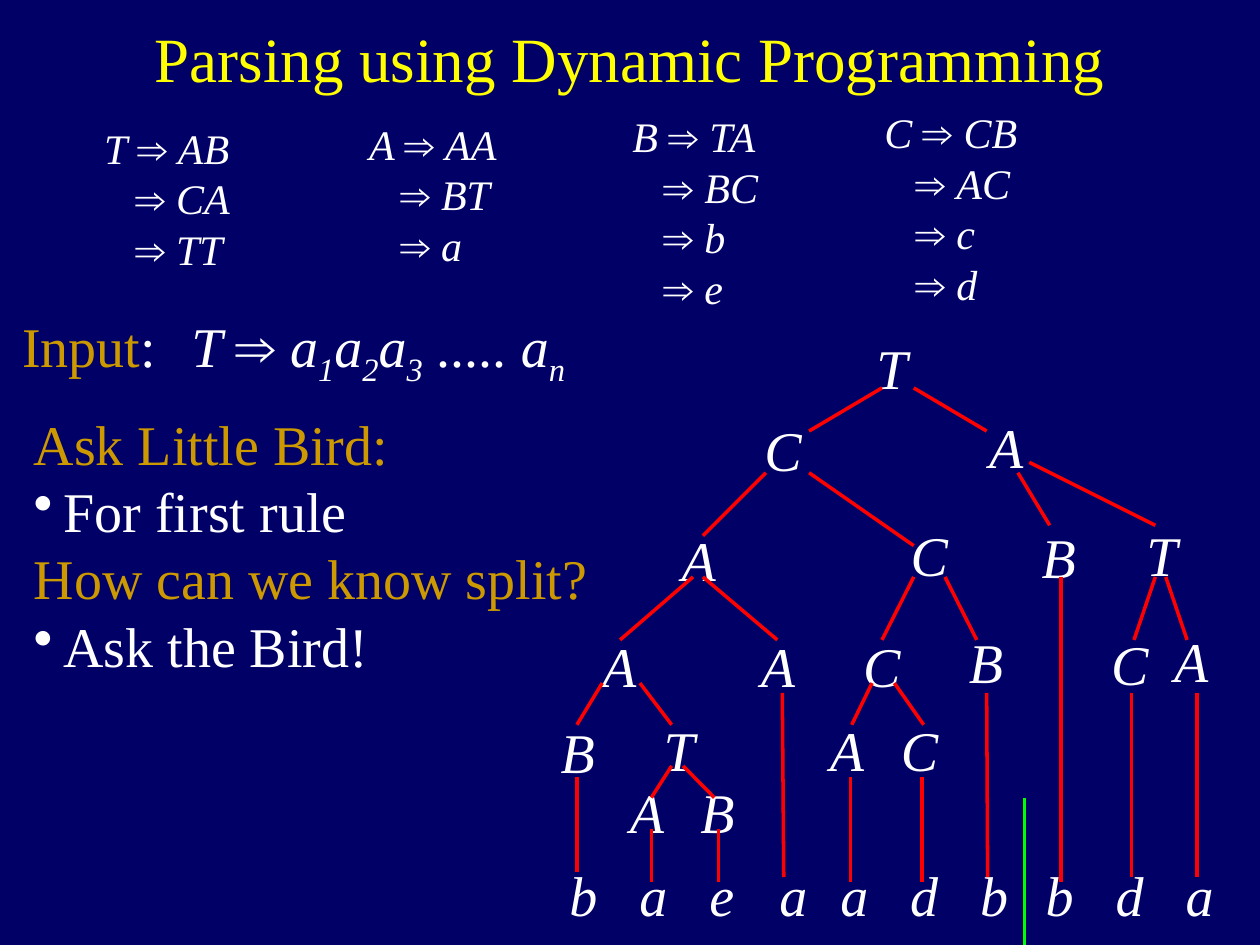
from typing import NamedTuple

from lxml import etree
from pptx import Presentation
from pptx.dml.color import RGBColor
from pptx.enum.shapes import MSO_CONNECTOR
from pptx.enum.text import MSO_ANCHOR, PP_ALIGN
from pptx.oxml.ns import qn
from pptx.util import Cm, Pt

STRAIGHT = MSO_CONNECTOR.STRAIGHT
MIDDLE = MSO_ANCHOR.MIDDLE
CENTER = PP_ALIGN.CENTER

FONT = "Times New Roman"
NAVY, YELLOW, GOLD, WHITE = "000066", "FFFF00", "CC9900", "FFFFFF"
RED, GREEN = "FF0000", "00FF00"
GRAMMAR_SIZE, TEXT_SIZE = 24, 32
RULE_INDENT, BULLET_INDENT, LEAF_GAP = 0.63, 0.6, 1.41


class Grammar(NamedTuple):
    symbol: str
    left: float
    top: float
    products: list[str]


class Label(NamedTuple):
    text: str
    left: float
    top: float
    width: float = 1.27


class Tier(NamedTuple):
    """Branches that start at one height and end at another."""
    top: float
    bottom: float
    branches: list[tuple[float, float]]


GRAMMARS = [
    Grammar("T", 1.85, 2.34, ["AB", "CA", "TT"]),
    Grammar("A", 7.19, 2.26, ["AA", "BT", "a"]),
    Grammar("B", 12.5, 2.11, ["TA", "BC", "b", "e"]),
    Grammar("C", 17.58, 2.03, ["CB", "AC", "c", "d"]),
]
ADVICE = [
    ("Ask Little Bird:", False),
    ("For first rule", True),
    ("How can we know split?", False),
    ("Ask the Bird!", True),
]
NODES = [
    Label("T", 17.42, 6.6),
    Label("C", 15.16, 8.26), Label("A", 19.69, 8.2),
    Label("A", 13.49, 10.46), Label("C", 18.11, 10.36),
    Label("B", 20.75, 10.41), Label("T", 22.86, 10.36),
    Label("A", 11.89, 12.6), Label("A", 15.09, 12.6),
    Label("C", 17.15, 12.6), Label("B", 19.28, 12.52),
    Label("C", 22.15, 12.57), Label("A", 23.42, 12.5),
    Label("B", 11.05, 14.33), Label("T", 13.13, 14.3),
    Label("A", 16.48, 14.3), Label("C", 17.91, 14.3),
    Label("A", 12.45, 15.54), Label("B", 13.87, 15.54),
]
LEAVES = [
    Label("b\ta\te\ta", 11.23, 17.22, 5.4),
    Label("a\td\tb", 16.69, 17.22, 4.2),
    Label("b\td\ta", 20.83, 17.22, 4.2),
]
TIERS = [
    Tier(7.82, 8.69, [(17.78, 16.31), (18.42, 19.89)]),
    Tier(9.53, 10.8, [(15.44, 14.17)]),
    Tier(9.53, 11, [(16.31, 18.42)]),
    Tier(9.53, 10.59, [(20.52, 21.16)]),
    Tier(9.32, 10.59, [(20.75, 23.29)]),
    Tier(11.63, 12.9, [(13.97, 12.5), (14.17, 15.67), (18.42, 17.78),
                       (19.05, 19.69), (23.29, 22.86), (23.5, 23.93)]),
    Tier(13.77, 14.61, [(12.14, 11.63), (12.9, 13.54),
                        (17.58, 17.17), (18.03, 18.62)]),
    Tier(15.44, 16.08, [(13.54, 13.13), (13.77, 14.4)]),
    Tier(15.67, 17.58, [(11.63, 11.63)]),
    Tier(16.71, 17.78, [(13.13, 13.13), (14.48, 14.48)]),
    Tier(15.67, 17.78, [(17.15, 17.15), (18.59, 18.59)]),
    Tier(13.97, 17.68, [(15.77, 15.8), (19.89, 19.91),
                        (22.81, 22.81), (24.13, 24.13)]),
    Tier(11.63, 17.78, [(21.39, 21.39)]),
]


def color(code: str) -> RGBColor:
    return RGBColor.from_string(code)


def add_span(para, text: str, fill: str = WHITE, baseline: int = 0, **formats):
    span = para.add_run()
    span.text = text
    for name, value in {"name": FONT, "size": Pt(TEXT_SIZE), **formats}.items():
        setattr(span.font, name, value)
    span.font.color.rgb = color(fill)
    if baseline:
        span.font._element.set("baseline", str(baseline * 1000))


def add_box(slide, left: float, top: float, width: float, height: float = 1.6):
    box = slide.shapes.add_textbox(Cm(left), Cm(top), Cm(width), Cm(height))
    box.text_frame.word_wrap = True
    return box.text_frame


def next_para(frame, index: int):
    return frame.add_paragraph() if index else frame.paragraphs[0]


def indent(para, margin: float, bullet: bool = False):
    properties = para._p.get_or_add_pPr()
    properties.set("marL", str(Cm(margin)))
    properties.set("indent", str(-Cm(margin) if bullet else 0))
    if bullet:
        etree.SubElement(properties, qn("a:buChar")).set("char", "•")


def add_grammar(slide, grammar: Grammar):
    frame = add_box(slide, grammar.left, grammar.top, 5.28,
                    0.26 + 1.02 * len(grammar.products))
    for index, product in enumerate(grammar.products):
        para = next_para(frame, index)
        if index:
            indent(para, RULE_INDENT)
        else:
            add_span(para, f"{grammar.symbol} ", size=Pt(GRAMMAR_SIZE), italic=True)
        add_span(para, "⇒ ", size=Pt(GRAMMAR_SIZE))
        add_span(para, product, size=Pt(GRAMMAR_SIZE), italic=True)


def add_input(slide):
    para = add_box(slide, 0.2, 6.15, 3.48).paragraphs[0]
    add_span(para, "Input", GOLD)
    add_span(para, ":")
    para = add_box(slide, 3.61, 6.15, 9).paragraphs[0]
    add_span(para, "T ", italic=True)
    add_span(para, "⇒ ")
    for number in "123":
        add_span(para, "a", italic=True)
        add_span(para, number, baseline=-25, italic=True)
    add_span(para, " ..... ")
    add_span(para, "a", italic=True)
    add_span(para, "n", baseline=-25, italic=True)


def add_advice(slide):
    frame = add_box(slide, 0.43, 8.13, 12.2, 5.66)
    for index, (text, bullet) in enumerate(ADVICE):
        para = next_para(frame, index)
        if bullet:
            indent(para, BULLET_INDENT, bullet=True)
        add_span(para, text, WHITE if bullet else GOLD)


def add_label(slide, label: Label):
    """Add tree symbols, with tab stops at equal gaps between them."""
    para = add_box(slide, label.left, label.top, label.width).paragraphs[0]
    gaps = label.text.count("\t")
    if gaps:
        stops = etree.SubElement(para._p.get_or_add_pPr(), qn("a:tabLst"))
        for number in range(1, gaps + 1):
            stop = etree.SubElement(stops, qn("a:tab"))
            stop.set("pos", str(Cm(number * LEAF_GAP)))
            stop.set("algn", "l")
    add_span(para, label.text, italic=True)


def add_line(slide, start: tuple[float, float], end: tuple[float, float], stroke: str):
    line = slide.shapes.add_connector(STRAIGHT, *map(Cm, start + end))
    line.line.color.rgb = color(stroke)
    line.line.width = Pt(2)
    etree.SubElement(line._element.spPr, qn("a:effectLst"))


def add_title(slide):
    title = slide.shapes.title
    place = {"left": 1.9, "top": -0.43, "width": 21.6, "height": 3.18}
    for name, value in place.items():
        setattr(title, name, Cm(value))
    title.text_frame.vertical_anchor = MIDDLE
    para = title.text_frame.paragraphs[0]
    para.alignment = CENTER
    add_span(para, "Parsing using Dynamic Programming", YELLOW, size=Pt(36))


def main():
    deck = Presentation()
    deck.slide_width, deck.slide_height = Cm(25.4), Cm(19.05)
    slide = deck.slides.add_slide(deck.slide_layouts[5])
    slide.background.fill.solid()
    slide.background.fill.fore_color.rgb = color(NAVY)
    add_title(slide)
    for grammar in GRAMMARS:
        add_grammar(slide, grammar)
    add_input(slide)
    add_advice(slide)
    add_line(slide, (20.65, 19.05), (20.65, 16.08), GREEN)
    for label in NODES + LEAVES:
        add_label(slide, label)
    for tier in TIERS:
        for start, end in tier.branches:
            add_line(slide, (start, tier.top), (end, tier.bottom), RED)
    deck.save("out.pptx")


if __name__ == "__main__":
    main()
